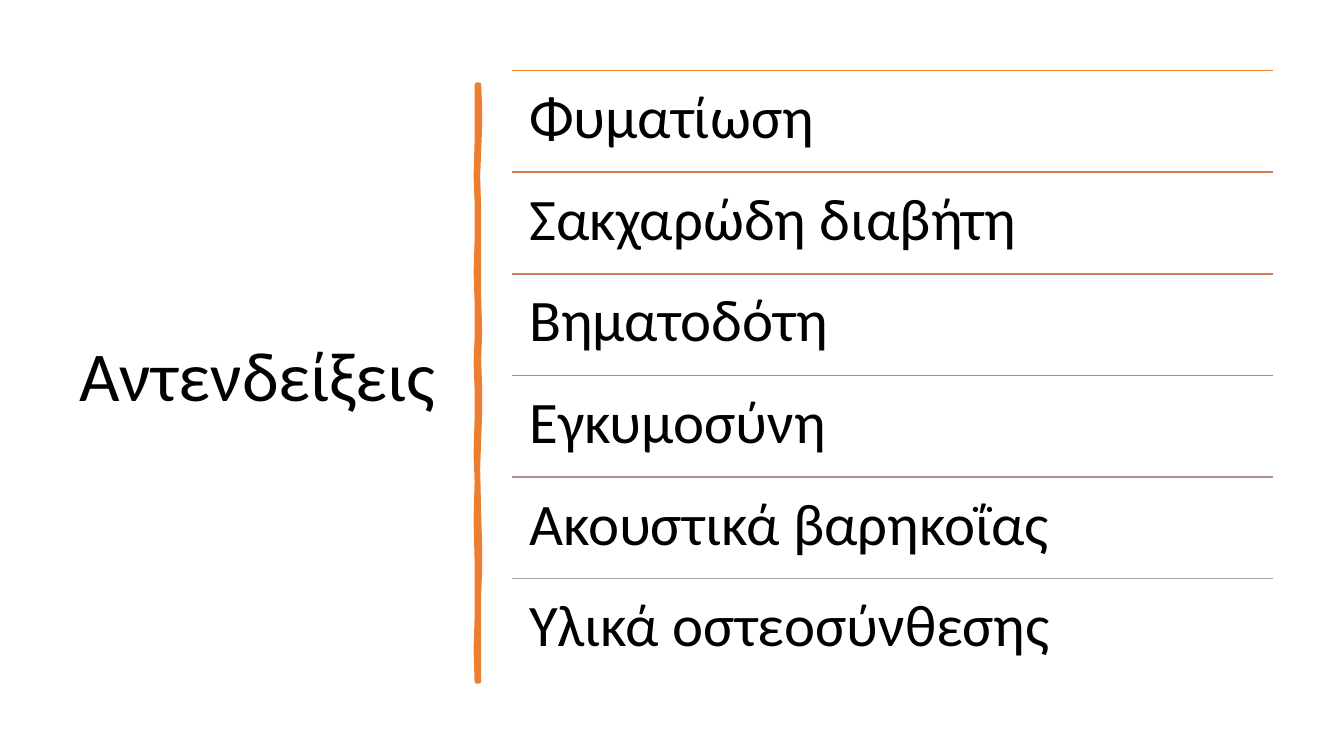
from dataclasses import dataclass

from lxml import etree
from pptx import Presentation
from pptx import util as u
from pptx.dml.color import RGBColor
from pptx.enum import shapes, text
from pptx.oxml.ns import qn
from pptx.slide import Slide


@dataclass(frozen=True)
class Theme:
    font: str = "Calibri"
    ink: str = "000000"
    accent: str = "ED7D31"
    title_size: int = 50
    item_size: int = 42
    bar_line: float = 3.25
    rule_line: float = 1


@dataclass(frozen=True)
class Box:
    left: float
    top: float
    width: float
    height: float


@dataclass(frozen=True)
class Item:
    label: str
    rule_color: str


THEME = Theme()
TITLE_BOX = Box(0.69, 0.7, 3.74, 6.11)
LIST_BOX = Box(5.08, 0.7, 7.55, 6.05)
ITEM_INSET = 0.17
ITEMS = [
    Item("Φυματίωση", "ED7D31"),
    Item("Σακχαρώδη διαβήτη", "DC7A4B"),
    Item("Βηματοδότη", "CC7D64"),
    Item("Εγκυμοσύνη", "BD867B"),
    Item("Ακουστικά βαρηκοΐας", "B09391"),
    Item("Υλικά οστεοσύνθεσης", "A5A5A5"),
]

# Outline of the hand-drawn bar, in hundredths of an inch
BAR_UNITS = 100
BAR_RIGHT_EDGE = [
    (475, 84), (476, 105), (476, 125), (475, 150), (474, 175), (475, 208),
    (475, 294), (476, 330), (475, 356), (476, 385), (476, 410), (475, 436),
    (474, 465), (475, 510), (476, 540), (476, 565), (475, 590), (475, 676),
]
BAR_LEFT_EDGE = [
    (473, 676), (472, 645), (473, 613), (473, 557), (472, 515), (473, 477),
    (472, 450), (473, 415), (473, 386), (472, 360), (473, 335), (473, 300),
    (472, 270), (473, 238), (473, 200), (472, 175), (473, 140), (473, 84),
]


def add_text(slide: Slide, box: Box, content: str, size: float,
             anchor: text.MSO_ANCHOR, inset: float | None = None) -> None:
    shape = slide.shapes.add_textbox(
        u.Inches(box.left), u.Inches(box.top), u.Inches(box.width), u.Inches(box.height))
    frame = shape.text_frame
    frame.word_wrap = True
    frame.vertical_anchor = anchor
    if inset is not None:
        frame.margin_left = frame.margin_right = u.Inches(inset)
        frame.margin_top = frame.margin_bottom = u.Inches(inset)
    frame.text = content
    paragraph = frame.paragraphs[0]
    paragraph.line_spacing = 0.9
    font = paragraph.runs[0].font
    font.name = THEME.font
    font.size = u.Pt(size)
    font.color.rgb = RGBColor.from_string(THEME.ink)


def add_rule(slide: Slide, left: float, top: float, width: float, color: str) -> None:
    rule = slide.shapes.add_connector(
        shapes.MSO_CONNECTOR.STRAIGHT,
        u.Inches(left), u.Inches(top), u.Inches(left + width), u.Inches(top))
    rule.line.color.rgb = RGBColor.from_string(color)
    rule.line.width = u.Pt(THEME.rule_line)
    etree.SubElement(rule._element.spPr, qn("a:effectLst"))


def add_bar(slide: Slide) -> None:
    start, *rest = BAR_RIGHT_EDGE + BAR_LEFT_EDGE
    builder = slide.shapes.build_freeform(*start, scale=u.Inches(1) / BAR_UNITS)
    builder.add_line_segments(rest, close=True)
    bar = builder.convert_to_shape()
    bar.shadow.inherit = False
    accent = RGBColor.from_string(THEME.accent)
    bar.fill.solid()
    bar.fill.fore_color.rgb = accent
    bar.line.color.rgb = accent
    bar.line.width = u.Pt(THEME.bar_line)


def add_items(slide: Slide) -> None:
    row_height = LIST_BOX.height / len(ITEMS)
    for index, item in enumerate(ITEMS):
        top = LIST_BOX.top + index * row_height
        add_rule(slide, LIST_BOX.left, top, LIST_BOX.width, item.rule_color)
        add_text(slide, Box(LIST_BOX.left, top, LIST_BOX.width, row_height),
                 item.label, THEME.item_size, text.MSO_ANCHOR.TOP, ITEM_INSET)


def main() -> None:
    presentation = Presentation()
    presentation.slide_width = u.Inches(13.33)
    presentation.slide_height = u.Inches(7.5)
    slide = presentation.slides.add_slide(presentation.slide_layouts[6])
    add_text(slide, TITLE_BOX, "Αντενδείξεις", THEME.title_size, text.MSO_ANCHOR.MIDDLE)
    add_bar(slide)
    add_items(slide)
    presentation.save("out.pptx")


if __name__ == "__main__":
    main()
